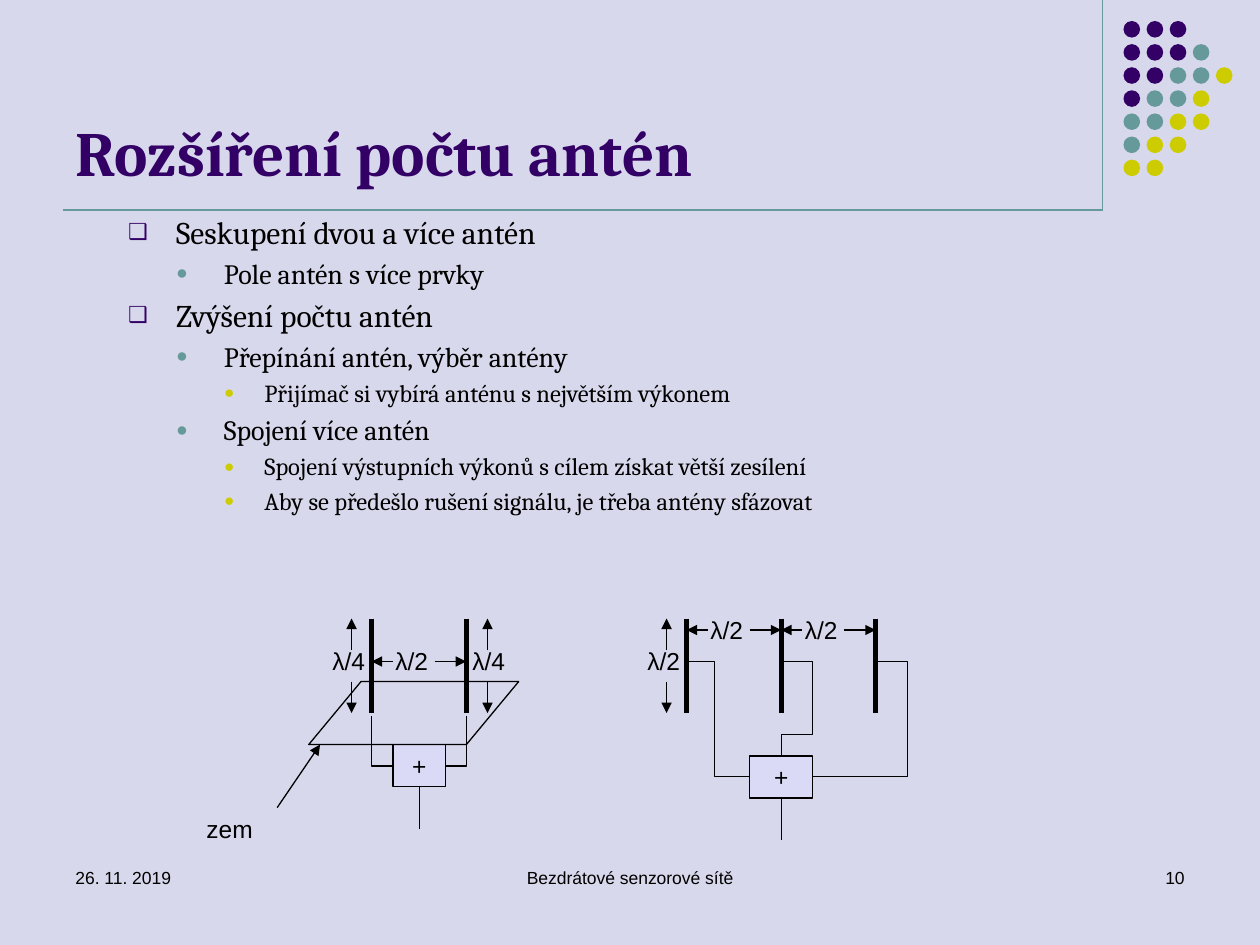
from lxml import etree
from pptx import Presentation
from pptx.dml.color import RGBColor
from pptx.enum.shapes import MSO_CONNECTOR, MSO_SHAPE
from pptx.enum.text import MSO_ANCHOR, PP_ALIGN
from pptx.oxml.ns import qn
from pptx.util import Pt

STRAIGHT = MSO_CONNECTOR.STRAIGHT
OVAL, RECT, SKEW = MSO_SHAPE.OVAL, MSO_SHAPE.RECTANGLE, MSO_SHAPE.PARALLELOGRAM
LEFT, CENTER, RIGHT = PP_ALIGN.LEFT, PP_ALIGN.CENTER, PP_ALIGN.RIGHT
MIDDLE, BOTTOM = MSO_ANCHOR.MIDDLE, MSO_ANCHOR.BOTTOM


class Theme:
    back = RGBColor.from_string("D8D8EC")
    box = RGBColor.from_string("DADAF6")
    ink = RGBColor.from_string("000000")
    plum = RGBColor.from_string("330066")
    teal = RGBColor.from_string("669999")
    lime = RGBColor.from_string("CCCC00")
    serif, sans = "Cambria", "Arial"
    title, label, foot = 36, 14, 10
    body = (18, 16, 14)
    thin, thick = 0.75, 3


deck = Presentation()
deck.slide_width, deck.slide_height = Pt(720), Pt(540)
slide = deck.slides.add_slide(deck.slide_layouts[6])
slide.background.fill.solid()
slide.background.fill.fore_color.rgb = Theme.back
shapes = slide.shapes


def line(x1, y1, x2, y2, color=Theme.ink, width=Theme.thin, arrow=False):
    link = shapes.add_connector(STRAIGHT, Pt(x1), Pt(y1), Pt(x2), Pt(y2))
    link.line.color.rgb = color
    link.line.width = Pt(width)
    if arrow:
        stroke = link.line._get_or_add_ln()
        etree.SubElement(stroke, qn("a:tailEnd"), type="triangle")
    etree.SubElement(link._element.spPr, qn("a:effectLst"))


def text(x, y, w, h, words, size, face=Theme.sans, color=Theme.ink, align=LEFT):
    frame = shapes.add_textbox(Pt(x), Pt(y), Pt(w), Pt(h)).text_frame
    frame.word_wrap = True
    par = frame.paragraphs[0]
    par.text, par.alignment = words, align
    par.font.size, par.font.name = Pt(size), face
    par.font.color.rgb = color
    return frame


line(630, 0, 630, 120, Theme.teal)
line(36, 120, 630, 120, Theme.teal)
hues = {"P": Theme.plum, "T": Theme.teal, "L": Theme.lime}
rows = ("PPP", "PPPT", "PPTTL", "PTTL", "TTLL", "TLL", "LL")
for row, marks in enumerate(rows):
    for col, mark in enumerate(marks):
        dot = shapes.add_shape(OVAL, Pt(642 + 13.2 * col), Pt(12 + 13.2 * row),
                               Pt(9.5), Pt(9.5))
        dot.shadow.inherit = False
        dot.fill.solid()
        dot.fill.fore_color.rgb = hues[mark]
        dot.line.fill.background()

head = text(36, 9.4, 594, 102, "Rozšíření počtu antén", Theme.title,
            Theme.serif, Theme.plum)
head.vertical_anchor = BOTTOM
head.paragraphs[0].font.bold = True

items = (
    (0, "Seskupení dvou a více antén"),
    (1, "Pole antén s více prvky"),
    (0, "Zvýšení počtu antén"),
    (1, "Přepínání antén, výběr antény"),
    (2, "Přijímač si vybírá anténu s největším výkonem"),
    (1, "Spojení více antén"),
    (2, "Spojení výstupních výkonů s cílem získat větší zesílení"),
    (2, "Aby se předešlo rušení signálu, je třeba antény sfázovat"),
)
looks = (("❑", "330066", 27.4, 27.4), ("●", "669999", 54.7, 27.4),
         ("●", "CCCC00", 77.8, 23))
body = shapes.add_textbox(Pt(66.2), Pt(118), Pt(564), Pt(223)).text_frame
body.word_wrap = True
for num, (level, words) in enumerate(items):
    par = body.add_paragraph() if num else body.paragraphs[0]
    sign, hue, left, hang = looks[level]
    par.text, par.level = words, level
    props = par._p.get_or_add_pPr()
    props.set("marL", str(Pt(left)))
    props.set("indent", str(-Pt(hang)))
    tint = etree.SubElement(props, qn("a:buClr"))
    etree.SubElement(tint, qn("a:srgbClr"), val=hue)
    etree.SubElement(props, qn("a:buSzPct"), val="70000")
    etree.SubElement(props, qn("a:buFont"), typeface=Theme.sans)
    etree.SubElement(props, qn("a:buChar"), char=sign)
    size = Theme.body[level]
    par.space_before = Pt(0.2 * size)
    par.font.size, par.font.name = Pt(size), Theme.serif
    par.font.color.rgb = Theme.ink

top, low = 353.5, 407.5
for mast in (212.4, 266.4, 392.4, 446.4, 500.4):
    line(mast, top, mast, low, width=Theme.thick)

for x, y, w, h in ((224.6, 425.5, 30, 24), (428.4, 432, 36, 24)):
    node = shapes.add_shape(RECT, Pt(x), Pt(y), Pt(w), Pt(h))
    node.shadow.inherit = False
    node.fill.solid()
    node.fill.fore_color.rgb = Theme.box
    node.line.color.rgb = Theme.ink
    node.line.width = Pt(Theme.thin)
    node.text_frame.word_wrap = False
    node.text_frame.vertical_anchor = MIDDLE
    par = node.text_frame.paragraphs[0]
    par.text, par.alignment = "+", CENTER
    par.font.size, par.font.name = Pt(Theme.label), Theme.sans
    par.font.color.rgb = Theme.ink
    line(x + w / 2, y + h, x + w / 2, y + h + 24)

ground = shapes.add_shape(SKEW, Pt(176.4), Pt(389.5), Pt(120), Pt(36))
ground.adjustments[0] = 0.83
ground.shadow.inherit = False
ground.fill.background()
ground.line.color.rgb = Theme.ink
ground.line.width = Pt(Theme.thin)

wires = (
    ((224.6, 437.8), (212.4, 437.8), (212.4, 409)),
    ((254.6, 437.8), (266.4, 437.8), (266.4, 409)),
    ((500.4, 378), (518.4, 378), (518.4, 443.6), (464.4, 443.6)),
    ((392.4, 378), (408.2, 378), (408.2, 443.6), (428.4, 443.6)),
    ((446.4, 378), (464.4, 378), (464.4, 419.8), (446.4, 419.8), (446.4, 432)),
)
for first, *rest in wires:
    pen = shapes.build_freeform(Pt(first[0]), Pt(first[1]))
    pen.add_line_segments([(Pt(x), Pt(y)) for x, y in rest], close=False)
    wire = pen.convert_to_shape()
    wire.shadow.inherit = False
    wire.fill.background()
    wire.line.color.rgb = Theme.ink
    wire.line.width = Pt(Theme.thin)

for x, left, words in ((200.9, 182.9, "λ/4"), (278.6, 262.8, "λ/4"),
                       (380.9, 362.9, "λ/2")):
    line(x, top + 18, x, top, arrow=True)
    line(x, low - 18, x, low, arrow=True)
    text(left, 365.8, 36, 24, words, Theme.label)

for x, y in ((212.4, 378), (392.4, 360), (446.4, 360)):
    line(x + 12, y, x, y, arrow=True)
    line(x + 36, y, x + 54, y, arrow=True)
    text(x + 6.5, y - 12.2, 36, 24, "λ/2", Theme.label)

text(110.9, 461.5, 44, 24, "zem", Theme.label)
line(158.4, 461.5, 182.9, 425.5, arrow=True)

for x, w, words, align in ((36, 168, "26. 11. 2019", LEFT),
                           (246, 228, "Bezdrátové senzorové sítě", CENTER),
                           (516, 168, "10", RIGHT)):
    text(x, 492, w, 36, words, Theme.foot, align=align)

deck.save("out.pptx")
